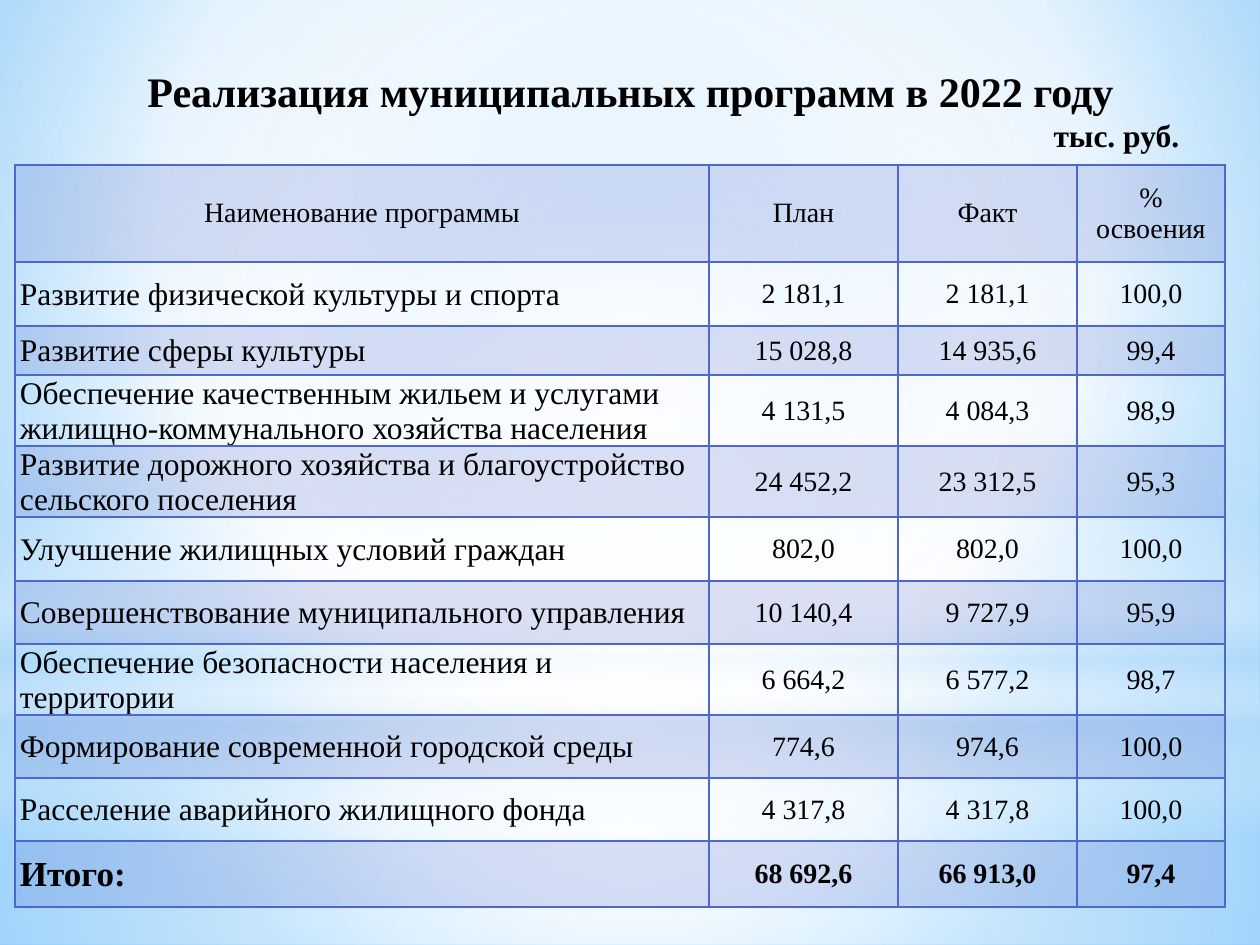
from lxml.etree import SubElement
from pptx import Presentation
from pptx.dml.color import RGBColor
from pptx.enum.shapes import MSO_SHAPE
from pptx.enum.text import MSO_ANCHOR, MSO_AUTO_SIZE, PP_ALIGN
from pptx.oxml.ns import qn
from pptx.util import Emu, Pt

FONT = "Times New Roman"
BLACK = RGBColor(0x00, 0x00, 0x00)
WHITE = RGBColor(0xFF, 0xFF, 0xFF)
INDIGO = RGBColor(0x4E, 0x67, 0xC8)
PALE_BLUE = RGBColor(0xB4, 0xDC, 0xFA)
SKY = RGBColor(0x9E, 0xD5, 0xFF)
DEEP_SKY = RGBColor(0x5B, 0xB9, 0xFF)

HEADINGS = ["Наименование программы", "План", "Факт", "% освоения"]
PROGRAMS = [
    ["Развитие физической культуры и спорта", "2 181,1", "2 181,1", "100,0"],
    ["Развитие сферы культуры", "15 028,8", "14 935,6", "99,4"],
    ["Обеспечение качественным жильем и услугами жилищно-коммунального "
     "хозяйства населения", "4 131,5", "4 084,3", "98,9"],
    ["Развитие дорожного хозяйства и благоустройство сельского поселения",
     "24 452,2", "23 312,5", "95,3"],
    ["Улучшение жилищных условий граждан", "802,0", "802,0", "100,0"],
    ["Совершенствование муниципального управления",
     "10 140,4", "9 727,9", "95,9"],
    ["Обеспечение безопасности населения и территории",
     "6 664,2", "6 577,2", "98,7"],
    ["Формирование современной городской среды", "774,6", "974,6", "100,0"],
    ["Расселение аварийного жилищного фонда", "4 317,8", "4 317,8", "100,0"],
]
TOTAL = ["Итого:", "68 692,6", "66 913,0", "97,4"]
COLUMN_WIDTHS = [694, 189, 179, 148]
ROW_HEIGHTS = [97, 64, 49, 71, 71, 64, 63, 71, 63, 63, 66]


def px(length):
    return Emu(round(length * 914400 / 126))


def add_color(parent, color, opacity=100):
    srgb = SubElement(parent, qn("a:srgbClr"), val=str(color))
    if opacity < 100:
        SubElement(srgb, qn("a:alpha"), val=str(opacity * 1000))


def set_gradient(fill, owner, stops, center=None):
    """Fill with (position, colour, opacity) stops, radial if center is given."""
    fill.gradient()
    gradient = owner.find(".//" + qn("a:gradFill"))
    for child in list(gradient):
        gradient.remove(child)
    stop_list = SubElement(gradient, qn("a:gsLst"))
    for position, color, opacity in stops:
        stop = SubElement(stop_list, qn("a:gs"), pos=str(position * 1000))
        add_color(stop, color, opacity)
    if center:
        focus = SubElement(gradient, qn("a:path"), {"path": "circle"})
        edges = {side: str(share * 1000) for side, share in zip("ltrb", center)}
        SubElement(focus, qn("a:fillToRect"), edges)
    else:
        SubElement(gradient, qn("a:lin"), ang="5400000", scaled="0")


def add_glow(slide, preset, top, height, stops, center=None):
    glow = slide.shapes.add_shape(preset, 0, px(top), px(1260), px(height))
    glow.shadow.inherit = False
    glow.line.fill.background()
    set_gradient(glow.fill, glow.element.spPr, stops, center)


def add_backdrop(slide):
    middle = [50, 50, 50, 50]
    set_gradient(slide.background.fill, slide.element,
                 [(0, SKY, 100), (60, WHITE, 100), (100, DEEP_SKY, 100)],
                 [20, 10, 20, 60])
    add_glow(slide, MSO_SHAPE.RECTANGLE, 703, 242,
             [(0, WHITE, 91), (37, WHITE, 76), (100, PALE_BLUE, 79)], middle)
    add_glow(slide, MSO_SHAPE.RECTANGLE, 0, 703,
             [(0, WHITE, 89), (48, WHITE, 62), (100, PALE_BLUE, 79)], middle)
    add_glow(slide, MSO_SHAPE.RECTANGLE, 519, 315,
             [(0, WHITE, 0), (29, WHITE, 30), (45, PALE_BLUE, 40),
              (55, WHITE, 26), (65, PALE_BLUE, 60), (100, WHITE, 0)])
    add_glow(slide, MSO_SHAPE.OVAL, 220, 703,
             [(0, WHITE, 100), (56, WHITE, 0)], middle)


def write(paragraph, text, size, bold=False, align=PP_ALIGN.CENTER):
    paragraph.alignment = align
    run = paragraph.add_run()
    run.text = text
    run.font.name = FONT
    run.font.size = Pt(size)
    run.font.bold = bold
    run.font.color.rgb = BLACK


def set_title(slide):
    title = slide.shapes.title
    title.left, title.top, title.width, title.height = map(px, (69, 59, 1123, 59))
    frame = title.text_frame
    frame.word_wrap = True
    frame.auto_size = MSO_AUTO_SIZE.NONE
    frame.vertical_anchor = MSO_ANCHOR.TOP
    write(frame.paragraphs[0], "Реализация муниципальных программ в 2022 году",
          24, bold=True)
    write(frame.add_paragraph(), "тыс. руб.", 18, bold=True, align=PP_ALIGN.RIGHT)
    # Bring the title in front of the backdrop
    title.element.getparent().append(title.element)


def set_borders(cell):
    properties = cell._tc.get_or_add_tcPr()
    for side in ("a:lnL", "a:lnR", "a:lnT", "a:lnB"):
        line = SubElement(properties, qn(side), w=str(Pt(1)))
        add_color(SubElement(line, qn("a:solidFill")), INDIGO)


def set_fill(cell, shaded):
    if not shaded:
        cell.fill.background()
        return
    cell.fill.solid()
    cell.fill.fore_color.rgb = INDIGO
    srgb = cell._tc.tcPr.find(qn("a:solidFill")).find(qn("a:srgbClr"))
    SubElement(srgb, qn("a:alpha"), val="20000")


def set_margins(cell, left, top, right, bottom):
    cell.margin_left, cell.margin_top = px(left), px(top)
    cell.margin_right, cell.margin_bottom = px(right), px(bottom)


def add_program_table(slide):
    rows = [HEADINGS, *PROGRAMS, TOTAL]
    table = slide.shapes.add_table(
        len(rows), len(HEADINGS), px(15), px(165),
        px(sum(COLUMN_WIDTHS)), px(sum(ROW_HEIGHTS))).table
    table.first_row = table.horz_banding = False
    for column, width in zip(table.columns, COLUMN_WIDTHS):
        column.width = px(width)
    for row, height in zip(table.rows, ROW_HEIGHTS):
        row.height = px(height)

    for r, texts in enumerate(rows):
        is_header, is_total = r == 0, r == len(rows) - 1
        for c, text in enumerate(texts):
            cell = table.cell(r, c)
            is_name = c == 0 and not is_header
            cell.vertical_anchor = MSO_ANCHOR.MIDDLE
            if is_header:
                set_margins(cell, 13, 6, 13, 6)
            else:
                set_margins(cell, 5 if is_name else 1, 1, 1, 0)
            set_borders(cell)
            set_fill(cell, shaded=r % 2 == 0)
            size = (20 if is_total else 18) if is_name else 16
            align = PP_ALIGN.LEFT if is_name else PP_ALIGN.CENTER
            write(cell.text_frame.paragraphs[0], text, size, is_total, align)


def main():
    deck = Presentation()
    deck.slide_width, deck.slide_height = px(1260), px(945)
    slide = deck.slides.add_slide(deck.slide_layouts[5])
    add_backdrop(slide)
    set_title(slide)
    add_program_table(slide)
    deck.save("out.pptx")


if __name__ == "__main__":
    main()
